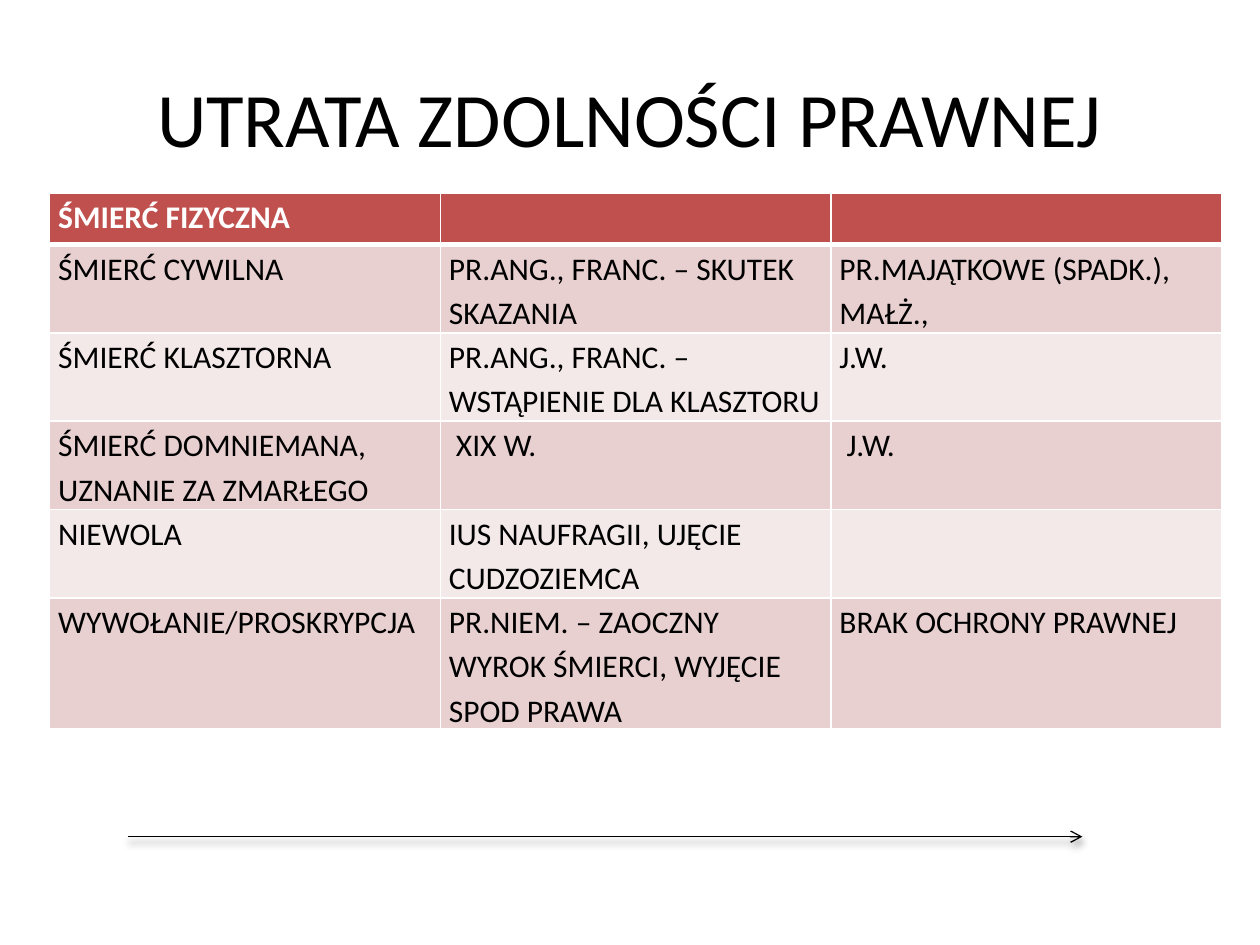
from dataclasses import dataclass

import lxml.etree
import pptx
import pptx.dml.color
import pptx.enum.dml
import pptx.enum.shapes
import pptx.enum.text
import pptx.oxml.ns
import pptx.util

Pt = pptx.util.Pt
RGBColor = pptx.dml.color.RGBColor

BLACK = RGBColor(0x00, 0x00, 0x00)
WHITE = RGBColor(0xFF, 0xFF, 0xFF)
HEADER_RED = RGBColor(0xC0, 0x50, 0x4D)
BAND_DARK = RGBColor(0xE8, 0xD0, 0xD0)
BAND_LIGHT = RGBColor(0xF4, 0xE9, 0xE9)
FONT = "Calibri"
COLUMN_WIDTH = 223.2
TABLE_LEFT, TABLE_TOP = 28.4, 110.2
THIN_BORDER, HEADER_BORDER = 1, 3


@dataclass(frozen=True)
class TextStyle:
    size: float
    color: RGBColor
    bold: bool = False


@dataclass(frozen=True)
class TableRow:
    height: float
    texts: tuple[str, str, str]


TITLE_STYLE = TextStyle(44, BLACK)
HEADER_STYLE = TextStyle(18, WHITE, True)
BODY_STYLE = TextStyle(18, BLACK)

ROWS = [
    TableRow(29.5, ("ŚMIERĆ FIZYCZNA", "", "")),
    TableRow(50.5, ("ŚMIERĆ CYWILNA", "PR.ANG., FRANC. – SKUTEK SKAZANIA",
                    "PR.MAJĄTKOWE (SPADK.), MAŁŻ.,")),
    TableRow(50.5, ("ŚMIERĆ KLASZTORNA",
                    "PR.ANG., FRANC. – WSTĄPIENIE DLA KLASZTORU", "J.W.")),
    TableRow(50.5, ("ŚMIERĆ DOMNIEMANA, UZNANIE ZA ZMARŁEGO", " XIX W.", " J.W.")),
    TableRow(50.5, ("NIEWOLA", "IUS NAUFRAGII, UJĘCIE CUDZOZIEMCA", "")),
    TableRow(75, ("WYWOŁANIE/PROSKRYPCJA",
                  "PR.NIEM. – ZAOCZNY WYROK ŚMIERCI, WYJĘCIE SPOD PRAWA",
                  "BRAK OCHRONY PRAWNEJ")),
]


def add_element(parent, tag: str, **attributes: object):
    element = lxml.etree.SubElement(parent, pptx.oxml.ns.qn(tag))
    for name, value in attributes.items():
        element.set(name, str(value))
    return element


def add_run(paragraph, text: str, style: TextStyle) -> None:
    run = paragraph.add_run()
    run.text = text
    run.font.name = FONT
    run.font.size = Pt(style.size)
    run.font.bold = style.bold
    run.font.color.rgb = style.color


def add_title(slide, text: str) -> None:
    shape = slide.shapes.add_textbox(Pt(36), Pt(21.6), Pt(648), Pt(90))
    frame = shape.text_frame
    frame.word_wrap = True
    frame.vertical_anchor = pptx.enum.text.MSO_ANCHOR.MIDDLE
    paragraph = frame.paragraphs[0]
    paragraph.alignment = pptx.enum.text.PP_ALIGN.CENTER
    add_run(paragraph, text, TITLE_STYLE)


def add_borders(cell, top: float, bottom: float) -> None:
    properties = cell._tc.get_or_add_tcPr()
    widths = {"a:lnL": THIN_BORDER, "a:lnR": THIN_BORDER, "a:lnT": top, "a:lnB": bottom}
    for tag, width in widths.items():
        border = add_element(properties, tag, w=int(Pt(width)))
        add_element(add_element(border, "a:solidFill"), "a:srgbClr", val=WHITE)


def fill_cell(cell, text: str, row_index: int) -> None:
    is_header = row_index == 0
    add_borders(cell, HEADER_BORDER if row_index == 1 else THIN_BORDER,
                HEADER_BORDER if is_header else THIN_BORDER)
    cell.fill.solid()
    band = BAND_DARK if row_index % 2 else BAND_LIGHT
    cell.fill.fore_color.rgb = HEADER_RED if is_header else band
    cell.margin_left = cell.margin_right = Pt(4.9)
    cell.margin_top = cell.margin_bottom = Pt(0)
    paragraph = cell.text_frame.paragraphs[0]
    paragraph.line_spacing = 1.15
    paragraph.font.size = Pt(BODY_STYLE.size)
    if text:
        add_run(paragraph, text, HEADER_STYLE if is_header else BODY_STYLE)


def add_loss_table(slide, rows: list[TableRow]) -> None:
    column_count = len(rows[0].texts)
    table = slide.shapes.add_table(
        len(rows), column_count, Pt(TABLE_LEFT), Pt(TABLE_TOP),
        Pt(COLUMN_WIDTH * column_count), Pt(sum(row.height for row in rows))).table
    table.first_row = True
    table.horz_banding = False
    for column in table.columns:
        column.width = Pt(COLUMN_WIDTH)
    for row_index, row in enumerate(rows):
        table.rows[row_index].height = Pt(row.height)
        for column_index, text in enumerate(row.texts):
            fill_cell(table.cell(row_index, column_index), text, row_index)


def add_arrow(slide, left: float, right: float, height: float) -> None:
    arrow = slide.shapes.add_connector(
        pptx.enum.shapes.MSO_CONNECTOR.STRAIGHT, Pt(left), Pt(height), Pt(right), Pt(height))
    arrow.line.color.rgb = BLACK
    arrow.line.width = Pt(0.75)
    add_element(arrow.line._get_or_add_ln(), "a:tailEnd", type="arrow")
    effects = add_element(arrow._element.spPr, "a:effectLst")
    shadow = add_element(effects, "a:outerShdw", blurRad=int(Pt(4)), dist=int(Pt(3)),
                         dir=90 * 60000, rotWithShape=0)
    shadow_color = add_element(shadow, "a:srgbClr", val=BLACK)
    add_element(shadow_color, "a:alpha", val=40000)


def main() -> None:
    presentation = pptx.Presentation()
    presentation.slide_width = Pt(720)
    presentation.slide_height = Pt(540)
    slide = presentation.slides.add_slide(presentation.slide_layouts[6])
    add_title(slide, "UTRATA ZDOLNOŚCI PRAWNEJ")
    add_loss_table(slide, ROWS)
    add_arrow(slide, 73.4, 618.5, 478.1)
    presentation.save("out.pptx")


if __name__ == "__main__":
    main()
